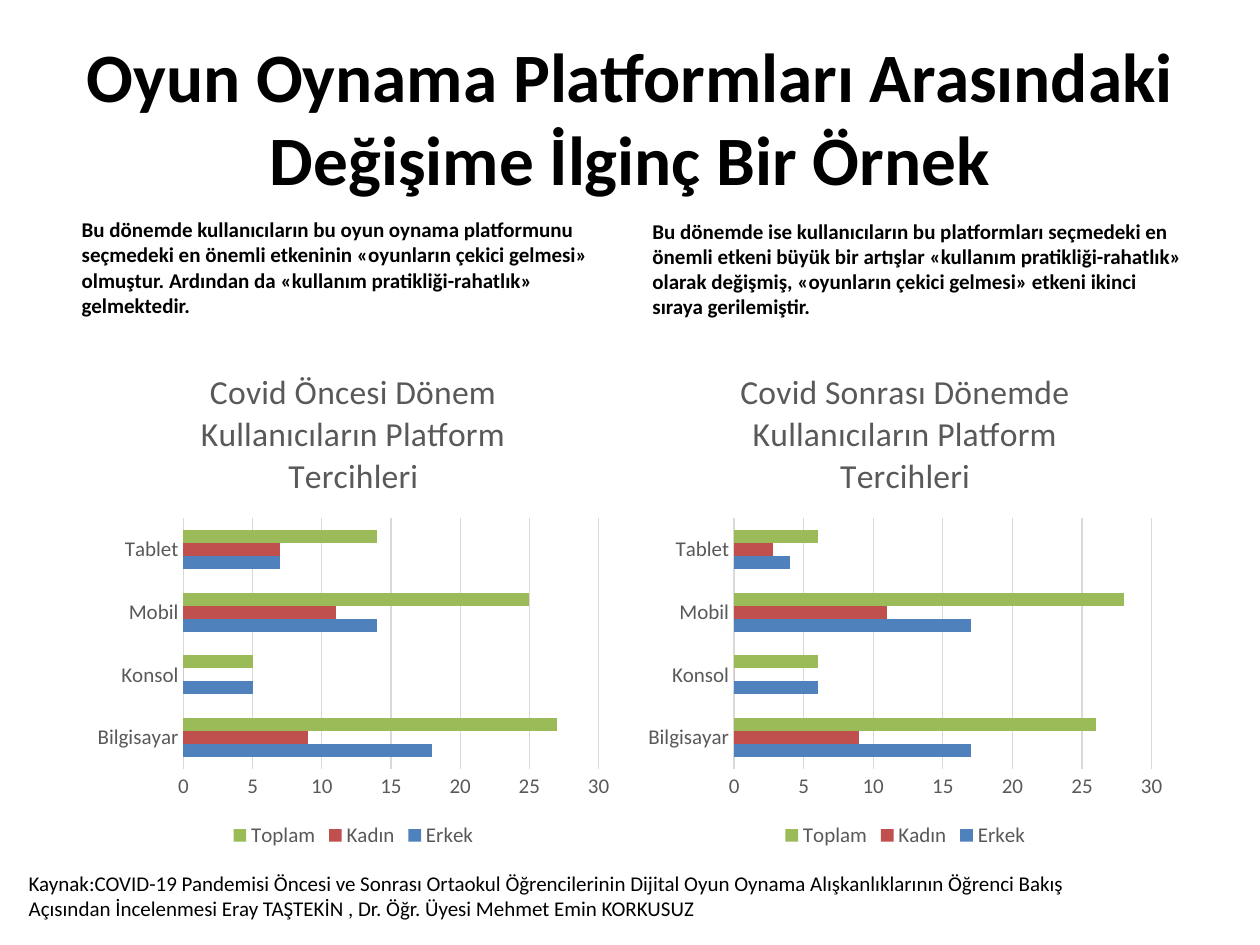
import pptx
import pptx.util
import pptx.chart.data
import pptx.dml.color
import pptx.enum.chart
import pptx.enum.text

COLORS = {
    "text": "000000", "label": "595959", "grid": "D9D9D9",
    "Erkek": "4F81BD", "Kadın": "C0504D", "Toplam": "9BBB59",
}
FONT = "Calibri"

presentation = pptx.Presentation()
presentation.slide_width = pptx.util.Inches(10)
presentation.slide_height = pptx.util.Inches(7.5)
column = presentation.slide_width / 100
row = presentation.slide_height / 100
slide = presentation.slides.add_slide(presentation.slide_layouts[6])


def style_font(font, size, color, bold=False):
    font.name = FONT
    font.size = pptx.util.Pt(size)
    font.bold = bold
    font.color.rgb = pptx.dml.color.RGBColor.from_string(COLORS[color])


def add_text(text, left, top, width, height, size=12, bold=False, anchor="TOP", align="LEFT"):
    box = slide.shapes.add_textbox(
        int(left * column), int(top * row), int(width * column), int(height * row))
    frame = box.text_frame
    frame.word_wrap = True
    frame.vertical_anchor = getattr(pptx.enum.text.MSO_ANCHOR, anchor)
    paragraph = frame.paragraphs[0]
    paragraph.alignment = getattr(pptx.enum.text.PP_ALIGN, align)
    run = paragraph.add_run()
    run.text = text
    style_font(run.font, size, "text", bold)


add_text("Oyun Oynama Platformları Arasındaki Değişime İlginç Bir Örnek",
         5, 4, 90, 16.67, size=39.6, bold=True, anchor="MIDDLE", align="CENTER")

periods = [
    {
        "caption": "Bu dönemde kullanıcıların bu oyun oynama platformunu seçmedeki en önemli "
                   "etkeninin «oyunların çekici gelmesi» olmuştur. Ardından da «kullanım "
                   "pratikliği-rahatlık» gelmektedir.",
        "caption_box": (5.5, 24.93, 44.2, 9.33),
        "title": "Covid Öncesi Dönem Kullanıcıların Platform Tercihleri",
        "chart_left": 6.9, "chart_width": 42.3,
        "values": {"Erkek": (18, 5, 14, 7), "Kadın": (9, 0, 11, 7), "Toplam": (27, 5, 25, 14)},
    },
    {
        "caption": "Bu dönemde ise kullanıcıların bu platformları seçmedeki en önemli etkeni "
                   "büyük bir artışlar «kullanım pratikliği-rahatlık» olarak değişmiş, "
                   "«oyunların çekici gelmesi» etkeni ikinci sıraya gerilemiştir.",
        "caption_box": (50.8, 22.4, 44.2, 12),
        "title": "Covid Sonrası Dönemde Kullanıcıların Platform Tercihleri",
        "chart_left": 50.6, "chart_width": 42.5,
        "values": {"Erkek": (17, 6, 17, 4), "Kadın": (9, 0, 11, 2.8), "Toplam": (26, 6, 28, 6)},
    },
]

for period in periods:
    add_text(period["caption"], *period["caption_box"], bold=True, anchor="BOTTOM")

    chart_data = pptx.chart.data.CategoryChartData()
    chart_data.categories = ["Bilgisayar", "Konsol", "Mobil", "Tablet"]
    for name, values in period["values"].items():
        chart_data.add_series(name, values)
    chart = slide.shapes.add_chart(
        pptx.enum.chart.XL_CHART_TYPE.BAR_CLUSTERED,
        int(period["chart_left"] * column), int(36.53 * row),
        int(period["chart_width"] * column), int(53.73 * row), chart_data).chart
    style_font(chart.font, 10, "text")

    chart.has_title = True
    title_paragraph = chart.chart_title.text_frame.paragraphs[0]
    title_run = title_paragraph.add_run()
    title_run.text = period["title"]
    style_font(title_run.font, 19.2, "label")
    chart.chart_title.include_in_layout = False

    chart.has_legend = True
    chart.legend.position = pptx.enum.chart.XL_LEGEND_POSITION.BOTTOM
    chart.legend.include_in_layout = False
    style_font(chart.legend.font, 12, "label")

    plot = chart.plots[0]
    plot.gap_width = 182
    plot.vary_by_categories = False
    for series in plot.series:
        series.format.fill.solid()
        series.format.fill.fore_color.rgb = pptx.dml.color.RGBColor.from_string(COLORS[series.name])

    for axis in (chart.category_axis, chart.value_axis):
        axis.major_tick_mark = pptx.enum.chart.XL_TICK_MARK.NONE
        axis.minor_tick_mark = pptx.enum.chart.XL_TICK_MARK.NONE
        style_font(axis.tick_labels.font, 12, "label")
    chart.value_axis.minimum_scale = 0
    chart.value_axis.maximum_scale = 30
    chart.value_axis.major_unit = 5
    chart.value_axis.has_major_gridlines = True
    chart.value_axis.format.line.fill.background()
    for line in (chart.category_axis.format.line, chart.value_axis.major_gridlines.format.line):
        line.width = pptx.util.Pt(0.75)
        line.color.rgb = pptx.dml.color.RGBColor.from_string(COLORS["grid"])

add_text("Kaynak:COVID-19 Pandemisi Öncesi ve Sonrası Ortaokul Öğrencilerinin Dijital Oyun "
         "Oynama Alışkanlıklarının Öğrenci Bakış Açısından İncelenmesi Eray TAŞTEKİN , "
         "Dr. Öğr. Üyesi Mehmet Emin KORKUSUZ", 1.3, 91.47, 90.6, 6.67)

presentation.save("out.pptx")
